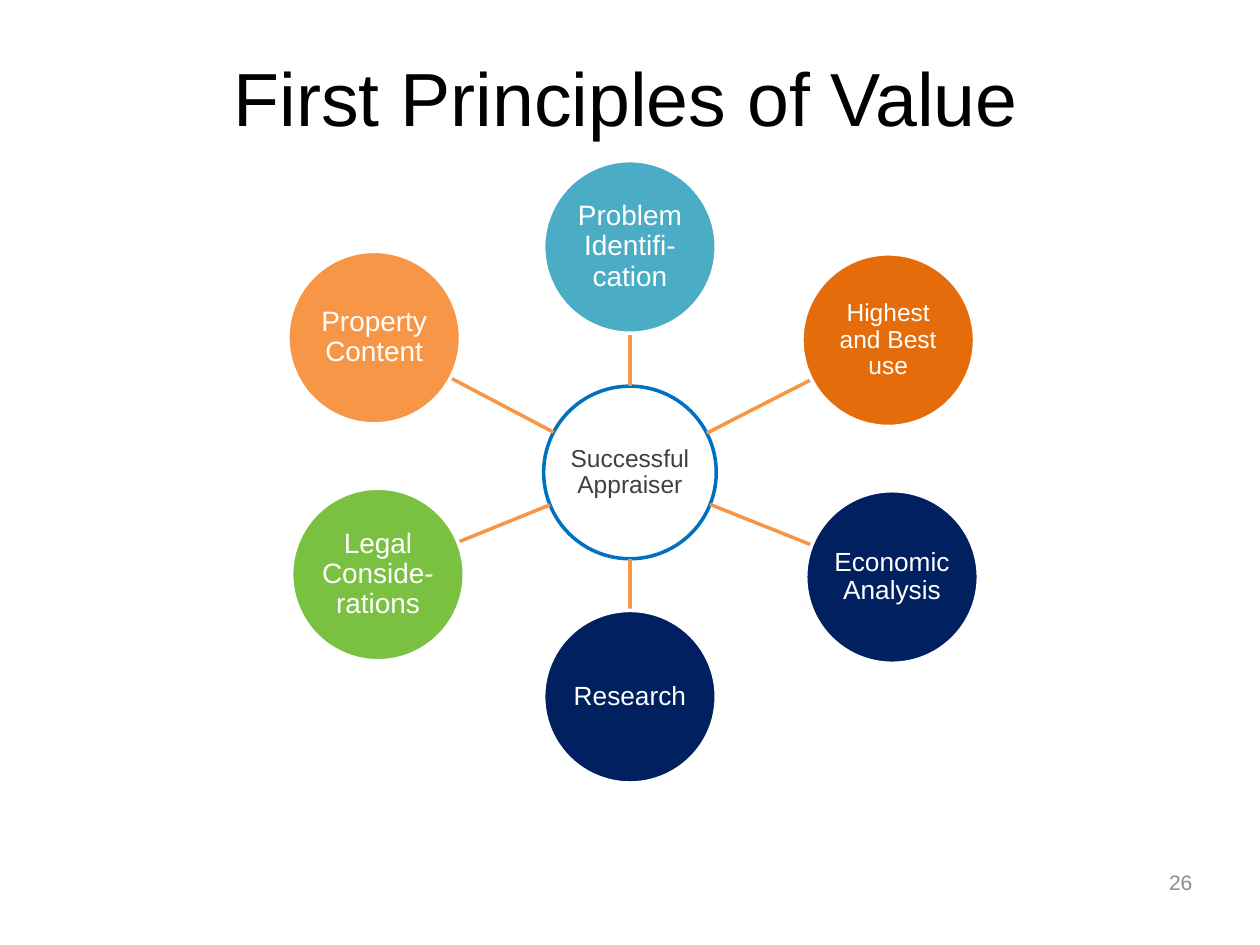
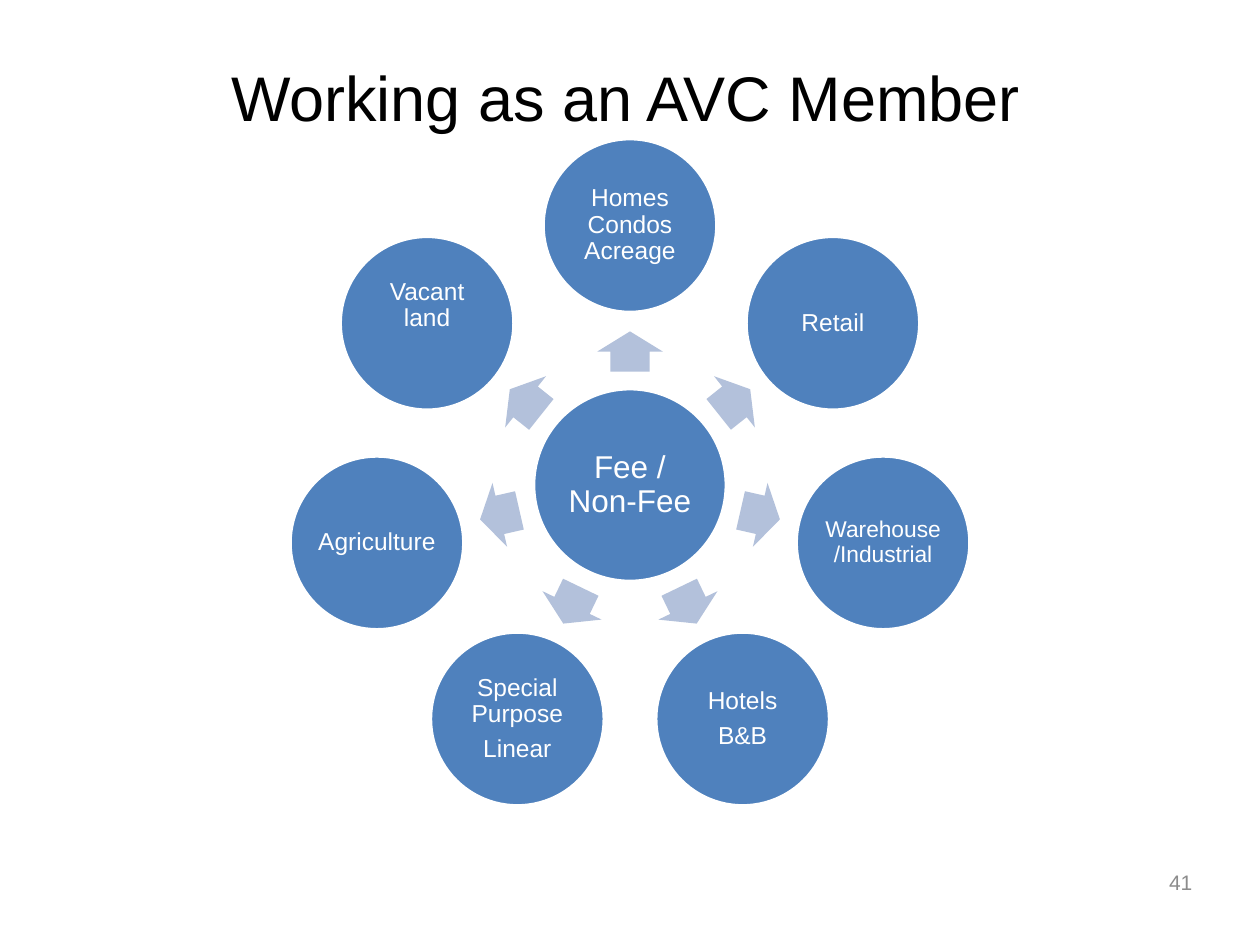
from dataclasses import dataclass
from math import cos, hypot, radians, sin

from lxml.etree import SubElement
from pptx import Presentation
from pptx.dml.color import RGBColor
from pptx.enum.shapes import MSO_CONNECTOR, MSO_SHAPE
from pptx.enum.text import MSO_ANCHOR, PP_ALIGN
from pptx.oxml.ns import qn
from pptx.util import Inches, Pt


@dataclass(frozen=True)
class Theme:
    """Colours, type sizes and strokes shared by the slides."""

    font: str = "Arial"
    black: str = "000000"
    white: str = "FFFFFF"
    dark_grey: str = "404040"
    grey: str = "8C8C8C"
    ring_blue: str = "0070C0"
    teal: str = "4BACC6"
    burnt_orange: str = "E46C0A"
    orange: str = "F79646"
    navy: str = "002060"
    green: str = "7AC142"
    blue: str = "4F81BD"
    pale_blue: str = "B3C1DB"
    title_size: int = 43
    small_title_size: int = 36
    hub_size: int = 18
    large_size: int = 16
    medium_size: int = 15
    label_size: int = 14
    small_size: int = 13
    number_size: int = 12
    stroke: int = 2


THEME = Theme()

PRINCIPLES_HUB = (5, 3.75)
PRINCIPLE_DIAMETER = 1.37
PRINCIPLES = [
    (5, 1.96, "Problem Identifi-cation", THEME.teal, THEME.large_size),
    (7.05, 2.7, "Highest and Best use", THEME.burnt_orange, THEME.label_size),
    (7.08, 4.58, "Economic Analysis", THEME.navy, THEME.medium_size),
    (5, 5.53, "Research", THEME.navy, THEME.medium_size),
    (3, 4.56, "Legal Conside-rations", THEME.green, THEME.large_size),
    (2.97, 2.68, "Property Content", THEME.orange, THEME.large_size),
]

MEMBER_HUB = (5, 3.85)
MEMBER_HUB_DIAMETER = 1.53
FIELD_DIAMETER = 1.38
FIELD_RADIUS = 2.06
ARROW_RADIUS = 1.06
ARROW_LENGTH, ARROW_WIDTH = 0.32, 0.52
FIELDS = [
    ("Homes Condos Acreage", {}),
    ("Retail", {}),
    ("Warehouse /Industrial", {"size": THEME.small_size}),
    ("Hotels\nB&B", {}),
    ("Special Purpose\nLinear", {}),
    ("Agriculture", {}),
    ("Vacant land", {"bottom_inset": 0.3}),
]


def set_format(target, values):
    """Set each named attribute of the target."""
    for name, value in values.items():
        setattr(target, name, value)


def write_text(shape, text, size, color, paragraph_format, inset=None):
    """Write one paragraph per line into a shape."""
    frame = shape.text_frame
    set_format(frame, {"word_wrap": True, "vertical_anchor": MSO_ANCHOR.MIDDLE})
    if inset is not None:
        sides = ("left", "top", "right", "bottom")
        set_format(frame, {f"margin_{side}": Inches(inset) for side in sides})
    frame.text = text
    for paragraph in frame.paragraphs:
        set_format(paragraph, paragraph_format)
        set_format(paragraph.font, {"name": THEME.font, "size": Pt(size)})
        paragraph.font.color.rgb = RGBColor.from_string(color)


def add_text(slide, box, text, size, color, alignment):
    """Add a text box at left, top, width, height."""
    shape = slide.shapes.add_textbox(*map(Inches, box))
    write_text(shape, text, size, color, {"alignment": alignment})


def add_titled_slide(presentation, title, title_size, number):
    """Add a blank slide with its title and slide number."""
    slide = presentation.slides.add_slide(presentation.slide_layouts[6])
    add_text(slide, (0.97, 0.14, 7.99, 1.25), title, title_size, THEME.black, PP_ALIGN.CENTER)
    add_text(slide, (9.18, 6.8, 0.66, 0.4), number, THEME.number_size, THEME.grey, PP_ALIGN.LEFT)
    return slide


def add_centred_shape(slide, kind, center, width, height, fill):
    """Add a filled preset shape around a centre point."""
    x, y = center
    box = (x - width / 2, y - height / 2, width, height)
    shape = slide.shapes.add_shape(kind, *map(Inches, box))
    shape.shadow.inherit = False
    shape.fill.solid()
    shape.fill.fore_color.rgb = RGBColor.from_string(fill)
    return shape


def add_circle(slide, center, diameter, text, fill, size=THEME.label_size,
               color=THEME.white, outline=THEME.white, inset=0.02, bottom_inset=None):
    """Add an outlined circle with a centred label."""
    circle = add_centred_shape(slide, MSO_SHAPE.OVAL, center, diameter, diameter, fill)
    circle.line.color.rgb = RGBColor.from_string(outline)
    circle.line.width = Pt(THEME.stroke)
    label_format = {
        "alignment": PP_ALIGN.CENTER,
        "line_spacing": 0.9,
        "space_after": Pt(0.35 * size),
    }
    write_text(circle, text, size, color, label_format, inset)
    if bottom_inset is not None:
        circle.text_frame.margin_bottom = Inches(bottom_inset)


def add_spoke(slide, hub, satellite, radius):
    """Draw a line between the rims of two circles of equal radius."""
    dx, dy = satellite[0] - hub[0], satellite[1] - hub[1]
    share = radius / hypot(dx, dy)
    ends = (
        hub[0] + dx * share, hub[1] + dy * share,
        satellite[0] - dx * share, satellite[1] - dy * share,
    )
    spoke = slide.shapes.add_connector(MSO_CONNECTOR.STRAIGHT, *map(Inches, ends))
    spoke.line.color.rgb = RGBColor.from_string(THEME.orange)
    spoke.line.width = Pt(THEME.stroke)
    SubElement(spoke._element.spPr, qn("a:effectLst"))


def add_arrow(slide, center, angle):
    """Add a block arrow pointing along a clockwise angle from the top."""
    arrow = add_centred_shape(slide, MSO_SHAPE.RIGHT_ARROW, center,
                              ARROW_LENGTH, ARROW_WIDTH, THEME.pale_blue)
    arrow.line.fill.background()
    arrow.adjustments[0] = 0.6
    arrow.adjustments[1] = 0.5
    arrow.rotation = (angle - 90) % 360


def point_on_ring(center, radius, angle):
    """Return the point at a clockwise angle from the top of a ring."""
    turn = radians(angle)
    return center[0] + radius * sin(turn), center[1] - radius * cos(turn)


def build_principles(presentation):
    """Build the hub with six coloured principles."""
    slide = add_titled_slide(presentation, "First Principles of Value", THEME.title_size, "26")
    add_circle(slide, PRINCIPLES_HUB, PRINCIPLE_DIAMETER, "Successful Appraiser", THEME.white,
               color=THEME.dark_grey, outline=THEME.ring_blue, inset=0.01)
    for x, y, label, fill, size in PRINCIPLES:
        add_spoke(slide, PRINCIPLES_HUB, (x, y), PRINCIPLE_DIAMETER / 2)
        add_circle(slide, (x, y), PRINCIPLE_DIAMETER, label, fill, size, inset=0.01)


def build_member_fields(presentation):
    """Build the hub with a ring of fields of work."""
    slide = add_titled_slide(presentation, "Working as an AVC Member", THEME.small_title_size, "41")
    add_circle(slide, MEMBER_HUB, MEMBER_HUB_DIAMETER, "Fee / Non-Fee", THEME.blue,
               THEME.hub_size, inset=0.03)
    for index, (label, options) in enumerate(FIELDS):
        angle = index * 360 / len(FIELDS)
        add_arrow(slide, point_on_ring(MEMBER_HUB, ARROW_RADIUS, angle), angle)
        add_circle(slide, point_on_ring(MEMBER_HUB, FIELD_RADIUS, angle), FIELD_DIAMETER,
                   label, THEME.blue, **options)


def main():
    """Build and save the presentation."""
    presentation = Presentation()
    set_format(presentation, {"slide_width": Inches(10), "slide_height": Inches(7.5)})
    build_principles(presentation)
    build_member_fields(presentation)
    presentation.save("out.pptx")


if __name__ == "__main__":
    main()
